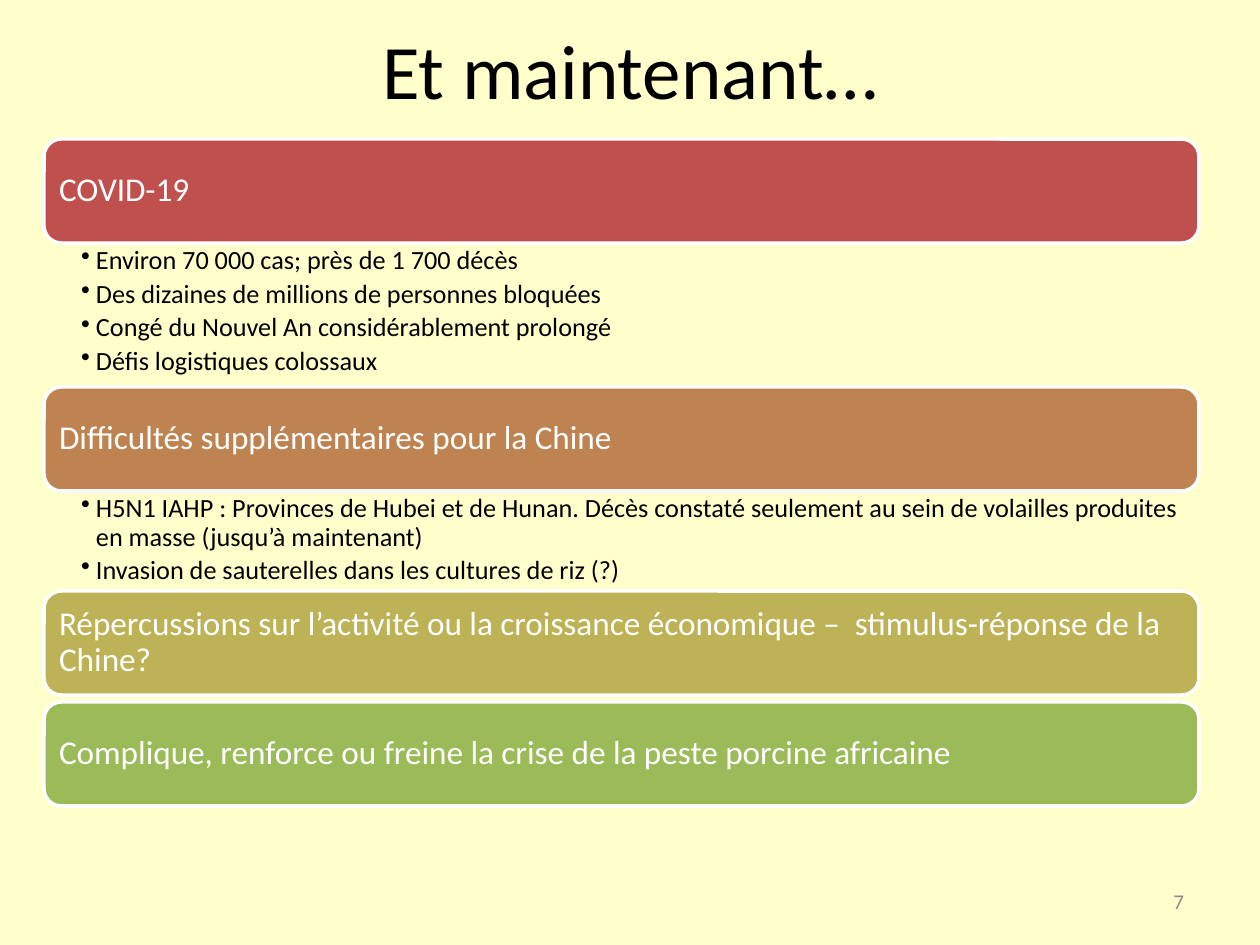
from lxml import etree
from pptx import Presentation
from pptx import util as u
from pptx.dml.color import RGBColor
from pptx.enum import shapes, text
from pptx.oxml.ns import qn

SCALE = u.Inches(1) / 126
COLORS = {
    "background": "FFFFCC", "black": "000000", "white": "FFFFFF", "gray": "8C8C8C",
    "red": "C0504D", "brown": "BE8351", "gold": "BDB255", "green": "9BBB59",
}
LEFT, WIDTH, BAR_HEIGHT, GAP = 44, 1155, 104, 7

# Bar colour, heading, bullets, height of the bullet area
SECTIONS = [
    ("red", "COVID-19", [
        "Environ 70 000 cas; près de 1 700 décès",
        "Des dizaines de millions de personnes bloquées",
        "Congé du Nouvel An considérablement prolongé",
        "Défis logistiques colossaux",
    ], 144),
    ("brown", "Difficultés supplémentaires pour la Chine", [
        "H5N1 IAHP : Provinces de Hubei et de Hunan. Décès constaté seulement "
        "au sein de volailles produites en masse (jusqu’à maintenant)",
        "Invasion de sauterelles dans les cultures de riz (?)",
    ], 100),
    ("gold", "Répercussions sur l’activité ou la croissance économique –  "
             "stimulus-réponse de la Chine?", [], GAP),
    ("green", "Complique, renforce ou freine la crise de la peste porcine africaine", [], GAP),
]


def px(*lengths):
    """Turn pixel lengths into EMU."""
    return [round(n * SCALE) for n in lengths]


def format_text(tf, size, color, align, anchor, insets):
    """Format the whole frame; insets are left, top, right, bottom in px."""
    tf.word_wrap = True
    tf.vertical_anchor = anchor
    tf.margin_left, tf.margin_top, tf.margin_right, tf.margin_bottom = px(*insets)
    for p in tf.paragraphs:
        p.alignment = align
        for r in p.runs:
            r.font.name = "Calibri"
            r.font.size = u.Pt(size)
            r.font.color.rgb = RGBColor.from_string(COLORS[color])


prs = Presentation()
prs.slide_width, prs.slide_height = px(1260, 945)
s = prs.slides.add_slide(prs.slide_layouts[5])
s.background.fill.solid()
s.background.fill.fore_color.rgb = RGBColor.from_string(COLORS["background"])

title = s.shapes.title
title.left, title.top, title.width, title.height = px(63, -10, 1134, 157)
title.text_frame.text = "Et maintenant…"
format_text(title.text_frame, 44, "black", text.PP_ALIGN.CENTER,
            text.MSO_ANCHOR.MIDDLE, (13, 6, 13, 6))

top = 139
for color, heading, bullets, below in SECTIONS:
    bar = s.shapes.add_shape(shapes.MSO_SHAPE.ROUNDED_RECTANGLE,
                             *px(LEFT, top, WIDTH, BAR_HEIGHT))
    bar.shadow.inherit = False
    bar.fill.solid()
    bar.fill.fore_color.rgb = RGBColor.from_string(COLORS[color])
    bar.line.color.rgb = RGBColor.from_string(COLORS["white"])
    bar.line.width = u.Pt(2)
    bar.text_frame.text = heading
    bar.text_frame.paragraphs[0].line_spacing = 0.9
    format_text(bar.text_frame, 19, "white", text.PP_ALIGN.LEFT,
                text.MSO_ANCHOR.MIDDLE, (10, 10, 10, 10))
    top += BAR_HEIGHT

    if bullets:
        tf = s.shapes.add_textbox(*px(LEFT, top, WIDTH, below)).text_frame
        tf.text = "\n".join(bullets)
        format_text(tf, 15, "black", text.PP_ALIGN.LEFT,
                    text.MSO_ANCHOR.TOP, (37, 4, 19, 4))
        indent = px(15)[0]
        for p in tf.paragraphs:
            p.line_spacing = 0.9
            p.space_after = u.Pt(3)
            pPr = p._p.get_or_add_pPr()
            pPr.set("marL", str(indent))
            pPr.set("indent", str(-indent))
            etree.SubElement(pPr, qn("a:buChar"), char="•")
    top += below

number = s.shapes.add_textbox(*px(903, 876, 294, 50))
number.text_frame.text = "7"
format_text(number.text_frame, 12, "gray", text.PP_ALIGN.RIGHT,
            text.MSO_ANCHOR.MIDDLE, (13, 6, 13, 6))

prs.save("out.pptx")
